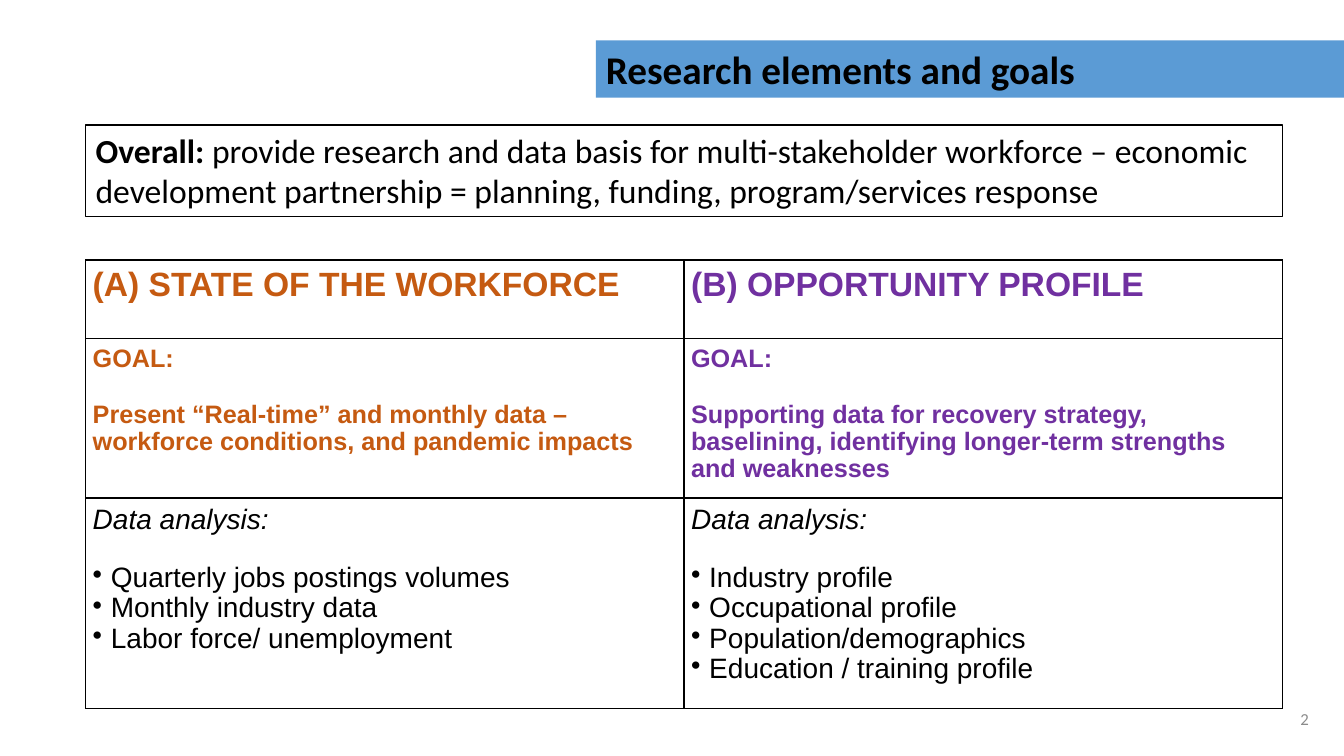
from lxml import etree
from pptx import Presentation
from pptx.dml.color import RGBColor
from pptx.enum.text import MSO_ANCHOR, PP_ALIGN
from pptx.oxml.ns import qn
from pptx.util import Emu, Inches, Pt

LEFT = PP_ALIGN.LEFT
RIGHT = PP_ALIGN.RIGHT
MIDDLE = MSO_ANCHOR.MIDDLE
BLACK = RGBColor(0x00, 0x00, 0x00)
GRAY = RGBColor(0x8C, 0x8C, 0x8C)
BLUE = RGBColor(0x5B, 0x9B, 0xD5)
ORANGE = RGBColor(0xC5, 0x5A, 0x11)
PURPLE = RGBColor(0x70, 0x30, 0xA0)

MARGIN = Inches(0.85)
CONTENT_WIDTH = Inches(11.87)
ROW_HEIGHTS = [0.78, 1.54, 2.09]
CELL_INSET = Inches(0.07)
BULLET_INDENT = Inches(0.18)

COLUMNS = [
    (
        ORANGE,
        "(A) STATE OF THE WORKFORCE",
        "Present “Real-time” and monthly data – workforce conditions, and pandemic impacts",
        ["Quarterly jobs postings\u00a0volumes", "Monthly industry data", "Labor force/ unemployment"],
    ),
    (
        PURPLE,
        "(B) OPPORTUNITY PROFILE",
        "Supporting data for recovery strategy, baselining, identifying longer-term strengths and weaknesses",
        ["Industry profile", "Occupational profile", "Population/demographics", "Education / training profile"],
    ),
]


def style_run(run, font_name, size, color, bold=False, italic=False):
    run.font.name = font_name
    run.font.size = Pt(size)
    run.font.color.rgb = color
    run.font.bold = bold
    run.font.italic = italic


def add_borders(cell):
    properties = cell._tc.get_or_add_tcPr()
    for position, side in enumerate(("a:lnL", "a:lnR", "a:lnT", "a:lnB")):
        line = etree.Element(qn(side), w=str(Pt(1)))
        fill = etree.SubElement(line, qn("a:solidFill"))
        etree.SubElement(fill, qn("a:srgbClr"), val=str(BLACK))
        properties.insert(position, line)


presentation = Presentation()
presentation.slide_width = Inches(13.33)
presentation.slide_height = Inches(7.5)
slide = presentation.slides.add_slide(presentation.slide_layouts[5])

title = slide.shapes.title
title.left, title.top = Inches(5.91), Inches(0.4)
title.width, title.height = Inches(7.57), Inches(0.57)
title.fill.solid()
title.fill.fore_color.rgb = BLUE
title.text_frame.text = "Research elements and goals"
title.text_frame.vertical_anchor = MIDDLE
title_paragraph = title.text_frame.paragraphs[0]
title_paragraph.alignment = LEFT
style_run(title_paragraph.runs[0], "Calibri", 28, BLACK, bold=True)

overall = slide.shapes.add_textbox(MARGIN, Inches(1.24), CONTENT_WIDTH, Inches(0.91))
overall.line.color.rgb = BLACK
overall.line.width = Pt(0.75)
overall.text_frame.word_wrap = True
overall_paragraph = overall.text_frame.paragraphs[0]
for text, bold in [
    ("Overall: ", True),
    ("provide research and data basis for multi-stakeholder workforce – economic "
     "development partnership = planning, funding, program/services response", False),
]:
    run = overall_paragraph.add_run()
    run.text = text
    style_run(run, "Calibri", 24, BLACK, bold=bold)

table = slide.shapes.add_table(
    len(ROW_HEIGHTS), len(COLUMNS), MARGIN, Inches(2.58), CONTENT_WIDTH, Inches(sum(ROW_HEIGHTS))
).table
table.first_row = False
table.horz_banding = False
for row, height in zip(table.rows, ROW_HEIGHTS):
    row.height = Inches(height)

for column_index, (color, heading, goal, analyses) in enumerate(COLUMNS):
    table.columns[column_index].width = Emu(CONTENT_WIDTH // len(COLUMNS))
    contents = [
        ([heading], 24, color, True),
        (["GOAL:", goal], 18, color, True),
        (["Data analysis:"] + analyses, 20, BLACK, False),
    ]
    for row_index, (lines, size, text_color, bold) in enumerate(contents):
        cell = table.cell(row_index, column_index)
        cell.fill.background()
        cell.margin_left = cell.margin_right = CELL_INSET
        cell.margin_top = cell.margin_bottom = CELL_INSET
        add_borders(cell)
        cell.text_frame.text = "\n".join(lines)
        is_analysis = row_index == 2
        for line_index, paragraph in enumerate(cell.text_frame.paragraphs):
            is_label = line_index == 0
            paragraph.line_spacing = 0.97
            style_run(paragraph.runs[0], "Arial", size, text_color, bold, is_analysis and is_label)
            if is_label and len(lines) > 1:
                paragraph.space_after = Pt(20)
            if is_analysis and not is_label:
                properties = paragraph._p.get_or_add_pPr()
                properties.set("marL", str(BULLET_INDENT))
                properties.set("indent", str(-BULLET_INDENT))
                etree.SubElement(properties, qn("a:buChar"), char="•")

page_number = slide.shapes.add_textbox(Inches(10.08), Inches(6.93), Inches(3), Inches(0.4))
page_number.text_frame.word_wrap = True
page_number.text_frame.vertical_anchor = MIDDLE
page_number.text_frame.text = "2"
page_paragraph = page_number.text_frame.paragraphs[0]
page_paragraph.alignment = RIGHT
style_run(page_paragraph.runs[0], "Calibri", 12, GRAY)

presentation.save("out.pptx")
